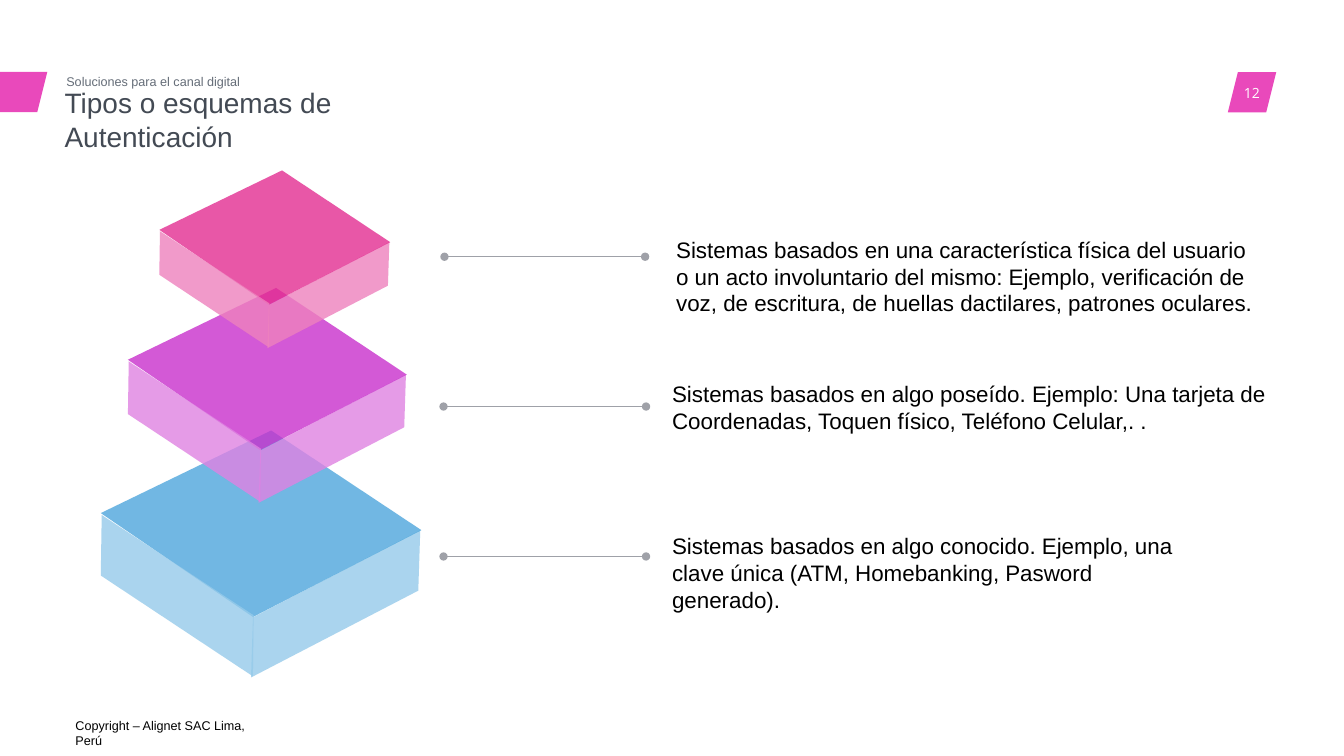
from lxml.etree import SubElement
from pptx import Presentation
from pptx.dml.color import RGBColor
from pptx.enum.shapes import MSO_CONNECTOR, MSO_SHAPE
from pptx.enum.text import MSO_ANCHOR, MSO_AUTO_SIZE, PP_ALIGN
from pptx.oxml.ns import qn
from pptx.util import Pt

BLACK = RGBColor(0x00, 0x00, 0x00)
WHITE = RGBColor(0xFF, 0xFF, 0xFF)
ACCENT = RGBColor(0xE9, 0x49, 0xBB)
TITLE_GRAY = RGBColor(0x43, 0x4A, 0x54)
SUBTITLE_GRAY = RGBColor(0x65, 0x6D, 0x78)
LINE_GRAY = RGBColor(0x9F, 0xA1, 0xA8)
BLUE, LIGHT_BLUE = RGBColor(0x4E, 0xA6, 0xDC), RGBColor(0x95, 0xCA, 0xEA)
PURPLE, LIGHT_PURPLE = RGBColor(0xC8, 0x30, 0xCC), RGBColor(0xDF, 0x82, 0xE2)
PINK, LIGHT_PINK = RGBColor(0xE3, 0x2D, 0x91), RGBColor(0xEE, 0x81, 0xBD)

# Faces of the largest block, measured from its left corner
RIGHT_FACE = [(228.2, 12.2), (226.8, 55.4), (107.3, 117.4), (108.7, 74.5)]
TOP_FACE = [(229, 12.2), (121.7, -59), (0, 0), (108.7, 74.2)]
LEFT_FACE = [(109.2, 73), (108.7, 116.6), (0, 44.6), (0.7, 1.4)]

# Left corner, scale, top colour, side colour; from bottom to top
BLOCKS = [
    ((72, 366.5), 1, BLUE, LIGHT_BLUE),
    ((91.4, 257), 0.87, PURPLE, LIGHT_PURPLE),
    ((113.8, 164.2), 0.72, PINK, LIGHT_PINK),
]

# Text, its box, and the left, right and height of its pointer
DESCRIPTIONS = [
    ("Sistemas basados en una característica física del usuario o un acto "
     "involuntario del mismo: Ejemplo, verificación de voz, de escritura, "
     "de huellas dactilares, patrones oculares.",
     (475.9, 164.9, 427.7, 65.5), (317.5, 460.8, 183.4)),
    ("Sistemas basados en algo poseído. Ejemplo: Una tarjeta de Coordenadas, "
     "Toquen físico, Teléfono Celular,. .",
     (473, 267.8, 457.2, 46.1), (316.8, 461.5, 290.4)),
    ("Sistemas basados en algo conocido. Ejemplo, una clave única (ATM, "
     "Homebanking, Pasword generado).",
     (473, 376.6, 374.4, 46.1), (316.8, 461.5, 397.5)),
]


def write_text(holder, text, size, color, font="Arial", align=PP_ALIGN.LEFT,
               anchor=MSO_ANCHOR.TOP, margins=(7.2, 3.6)):
    frame = holder.text_frame
    frame.word_wrap = True
    frame.auto_size = MSO_AUTO_SIZE.NONE
    frame.vertical_anchor = anchor
    frame.margin_left = frame.margin_right = Pt(margins[0])
    frame.margin_top = frame.margin_bottom = Pt(margins[1])
    paragraph = frame.paragraphs[0]
    paragraph.alignment = align
    paragraph.line_spacing = 1.0
    paragraph.space_before = Pt(0)
    run = paragraph.add_run()
    run.text = text
    run.font.name = font
    run.font.size = Pt(size)
    run.font.color.rgb = color


def add_text(slide, text, box, **text_format):
    label = slide.shapes.add_textbox(*map(Pt, box))
    write_text(label, text, **text_format)


def add_tab(slide, box):
    tab = slide.shapes.add_shape(MSO_SHAPE.PARALLELOGRAM, *map(Pt, box))
    tab.shadow.inherit = False
    tab.fill.solid()
    tab.fill.fore_color.rgb = ACCENT
    tab.line.fill.background()


def add_face(block, corner, scale, offsets, color):
    points = [(Pt(corner[0] + scale * x), Pt(corner[1] + scale * y))
              for x, y in offsets]
    outline = block.shapes.build_freeform(*points[0])
    outline.add_line_segments(points[1:], close=True)
    face = outline.convert_to_shape()
    face.shadow.inherit = False
    face.fill.solid()
    face.fill.fore_color.rgb = color
    face.line.fill.background()
    # Let the blocks underneath show through
    rgb = face._element.spPr.find(qn("a:solidFill"))[0]
    SubElement(rgb, qn("a:alpha"), val="80000")


def add_block(slide, corner, scale, top_color, side_color):
    block = slide.shapes.add_group_shape()
    for offsets, color in ((RIGHT_FACE, side_color), (TOP_FACE, top_color),
                           (LEFT_FACE, side_color)):
        add_face(block, corner, scale, offsets, color)


def add_pointer(slide, left, right, y):
    pointer = slide.shapes.add_connector(
        MSO_CONNECTOR.STRAIGHT, Pt(left), Pt(y), Pt(right), Pt(y))
    pointer.line.color.rgb = LINE_GRAY
    pointer.line.width = Pt(0.5)
    # Round ends, no shadow
    for end in ("a:headEnd", "a:tailEnd"):
        SubElement(pointer.line._get_or_add_ln(), qn(end), type="oval")
    SubElement(pointer._element.spPr, qn("a:effectLst"))


def main():
    deck = Presentation()
    deck.slide_width, deck.slide_height = Pt(960), Pt(540)
    slide = deck.slides.add_slide(deck.slide_layouts[5])

    # Footer, page number and side tab
    add_text(slide, "Copyright – Alignet SAC Lima, Perú",
             (46.8, 509, 149.8, 18), size=9, color=BLACK)
    add_tab(slide, (877, 51.5, 34.6, 28.8))
    add_text(slide, "12", (865.4, 51.8, 57.6, 28.8), size=10, color=WHITE,
             font="Open Sans", align=PP_ALIGN.CENTER,
             anchor=MSO_ANCHOR.MIDDLE, margins=(0, 0))
    add_tab(slide, (-41.8, 51.3, 75.6, 28.8))

    # Stacked blocks
    for block in BLOCKS:
        add_block(slide, *block)

    # Descriptions and their pointers
    for text, box, pointer in DESCRIPTIONS:
        add_text(slide, text, box, size=16, color=BLACK)
        add_pointer(slide, *pointer)

    # Title and subtitle
    title = slide.shapes.title
    title.left, title.top = Pt(38.9), Pt(57.6)
    title.width, title.height = Pt(320.4), Pt(31.7)
    write_text(title, "Tipos o esquemas de Autenticación",
               size=20, color=TITLE_GRAY)
    add_text(slide, "Soluciones para el canal digital",
             (40.3, 49, 344.9, 18), size=9, color=SUBTITLE_GRAY)

    deck.save("out.pptx")


if __name__ == "__main__":
    main()
